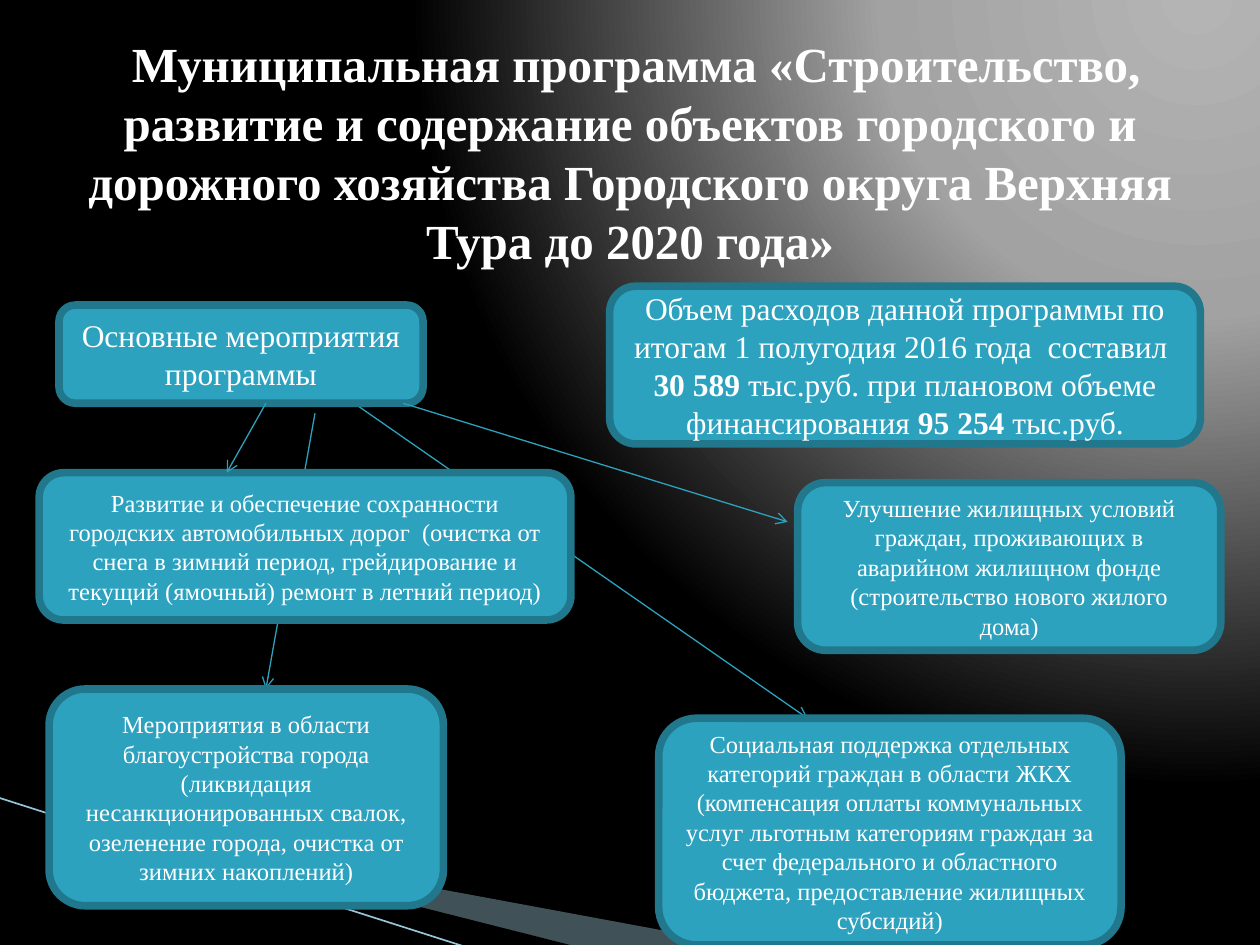
import pptx
import pptx.util
import pptx.dml.color
import pptx.enum.shapes
import pptx.enum.text
import pptx.oxml
import pptx.oxml.ns
from pptx.util import Cm

COLORS = {
    "fill": "2DA2BF", "edge": "21788D", "text": "FFFFFF",
    "band": "A0CBDC", "shade": "000000", "rule": "97C5D8",
    "glow": "B4B4B4", "mid": "A2A2A2", "dark": "000000",
}
FONT = "Times New Roman"
NS = pptx.oxml.ns.nsdecls("a")


def rgb(name):
    return pptx.dml.color.RGBColor.from_string(COLORS[name])


def cm(*values):
    return [Cm(v) for v in values]


def write(tf, runs, size=14, bold=False):
    tf.word_wrap = True
    tf.vertical_anchor = pptx.enum.text.MSO_ANCHOR.MIDDLE
    p = tf.paragraphs[0]
    p.alignment = pptx.enum.text.PP_ALIGN.CENTER
    for i, text in enumerate(runs):
        r = p.add_run()
        r.text = text
        r.font.name = FONT
        r.font.size = pptx.util.Pt(size)
        r.font.bold = bold or i % 2 == 1
        r.font.color.rgb = rgb("text")


def add_line(s, start, end, color, width, arrow=False):
    line = s.shapes.add_connector(
        pptx.enum.shapes.MSO_CONNECTOR.STRAIGHT, *cm(*start, *end))
    line.line.color.rgb = rgb(color)
    line.line.width = pptx.util.Pt(width)
    if arrow:
        line.line._get_or_add_ln().append(
            pptx.oxml.parse_xml(f'<a:tailEnd {NS} type="arrow"/>'))
    line._element.spPr.append(pptx.oxml.parse_xml(f"<a:effectLst {NS}/>"))


def add_polygon(s, box, points, color, alpha=None):
    x, y = box[:2]
    pts = [tuple(cm(x + dx, y + dy)) for dx, dy in points]
    builder = s.shapes.build_freeform(*pts[0], scale=1.0)
    builder.add_line_segments(pts[1:], close=True)
    sp = builder.convert_to_shape()
    sp.shadow.inherit = False
    sp.fill.solid()
    sp.fill.fore_color.rgb = rgb(color)
    sp.line.fill.background()
    if alpha:
        sp._element.spPr.find(".//" + pptx.oxml.ns.qn("a:srgbClr")).append(
            pptx.oxml.parse_xml(f'<a:alpha {NS} val="{alpha * 1000}"/>'))


def add_background(s):
    stops = "".join(
        f'<a:gs pos="{pos * 1000}"><a:srgbClr val="{COLORS[name]}"/></a:gs>'
        for pos, name in ((0, "glow"), (40, "mid"), (100, "dark")))
    s.background.fill.solid()
    bg_pr = s._element.cSld.bg.bgPr
    bg_pr.replace(bg_pr[0], pptx.oxml.parse_xml(
        f'<a:gradFill {NS} rotWithShape="1"><a:gsLst>{stops}</a:gsLst>'
        '<a:path path="circle"><a:fillToRect l="95000" t="-106000" '
        'r="5000" b="206000"/></a:path></a:gradFill>'))


def add_corner(s, box):
    x, y, w, h = box
    add_polygon(s, box, [(1.4, 0.46), (15.11, 3), (11.58, 3), (1.4, 0.43)],
                "band", 40)
    add_polygon(s, box, [(1.35, 0.4), (11.61, 3), (9.45, 3.02), (1.37, 0.43)],
                "shade")
    add_line(s, (x - 0.03, y), (x + w, y + h), "rule", 0.95)


def add_title(s, box, text):
    write(s.shapes.add_textbox(*cm(*box)).text_frame, [text], size=28, bold=True)


def add_card(s, box, runs, size=14):
    sp = s.shapes.add_shape(
        pptx.enum.shapes.MSO_SHAPE.ROUNDED_RECTANGLE, *cm(*box))
    sp.shadow.inherit = False
    sp.fill.solid()
    sp.fill.fore_color.rgb = rgb("fill")
    sp.line.color.rgb = rgb("edge")
    sp.line.width = pptx.util.Pt(4.33)
    write(sp.text_frame, runs, size)


def add_arrow(s, source, target, start, end):
    add_line(s, (source[0] + start[0], source[1] + source[3] + start[1]),
             (target[0] + end[0], target[1] + end[1]), "fill", 0.75, arrow=True)


def main():
    prs = pptx.Presentation()
    prs.slide_width, prs.slide_height = cm(25.4, 19.05)
    s = prs.slides.add_slide(prs.slide_layouts[6])

    volume = (12.29, 5.77, 11.91, 3.18)
    measures = (1.19, 6.15, 7.34, 1.98)
    roads = (0.79, 9.53, 10.72, 2.97)
    support = (13.28, 14.48, 9.32, 4.57)
    housing = (16.08, 9.73, 8.53, 3.38)
    city = (0.99, 13.89, 7.95, 4.37)

    add_background(s)
    add_corner(s, (0, 16.08, 9.42, 3.02))
    add_arrow(s, measures, support, (5.95, 0), (3, 0))
    add_arrow(s, measures, city, (5.16, 0.2), (4.37, 0))
    add_title(s, (1.27, 0.74, 22.86, 4.62),
              " Муниципальная программа «Строительство, развитие и содержание "
              "объектов городского и дорожного хозяйства Городского округа "
              "Верхняя Тура до 2020 года»")
    add_card(s, volume, [
        "Объем расходов данной программы по итогам 1 полугодия 2016 года  составил  ",
        "30 589 ", "тыс.руб. при плановом объеме финансирования ",
        "95 254 ", "тыс.руб."], size=18)
    add_card(s, measures, ["Основные мероприятия программы"], size=18)
    add_card(s, roads, [
        "Развитие и обеспечение сохранности городских автомобильных дорог  "
        "(очистка от снега в зимний период, грейдирование и текущий (ямочный) "
        "ремонт в летний период)"])
    add_card(s, support, [
        "Социальная поддержка отдельных категорий граждан в области ЖКХ "
        "(компенсация оплаты коммунальных услуг льготным категориям граждан за "
        "счет федерального и областного бюджета, предоставление жилищных субсидий)"])
    add_card(s, housing, [
        "Улучшение жилищных условий граждан, проживающих в аварийном жилищном "
        "фонде (строительство нового жилого дома)"])
    add_card(s, city, [
        "Мероприятия в области благоустройства города (ликвидация "
        "несанкционированных свалок, озеленение города, очистка от зимних "
        "накоплений)"])
    add_arrow(s, measures, housing, (6.94, 0), (-0.2, 0.79))
    add_arrow(s, measures, roads, (4.17, 0), (3.78, 0))

    prs.save("out.pptx")


if __name__ == "__main__":
    main()
